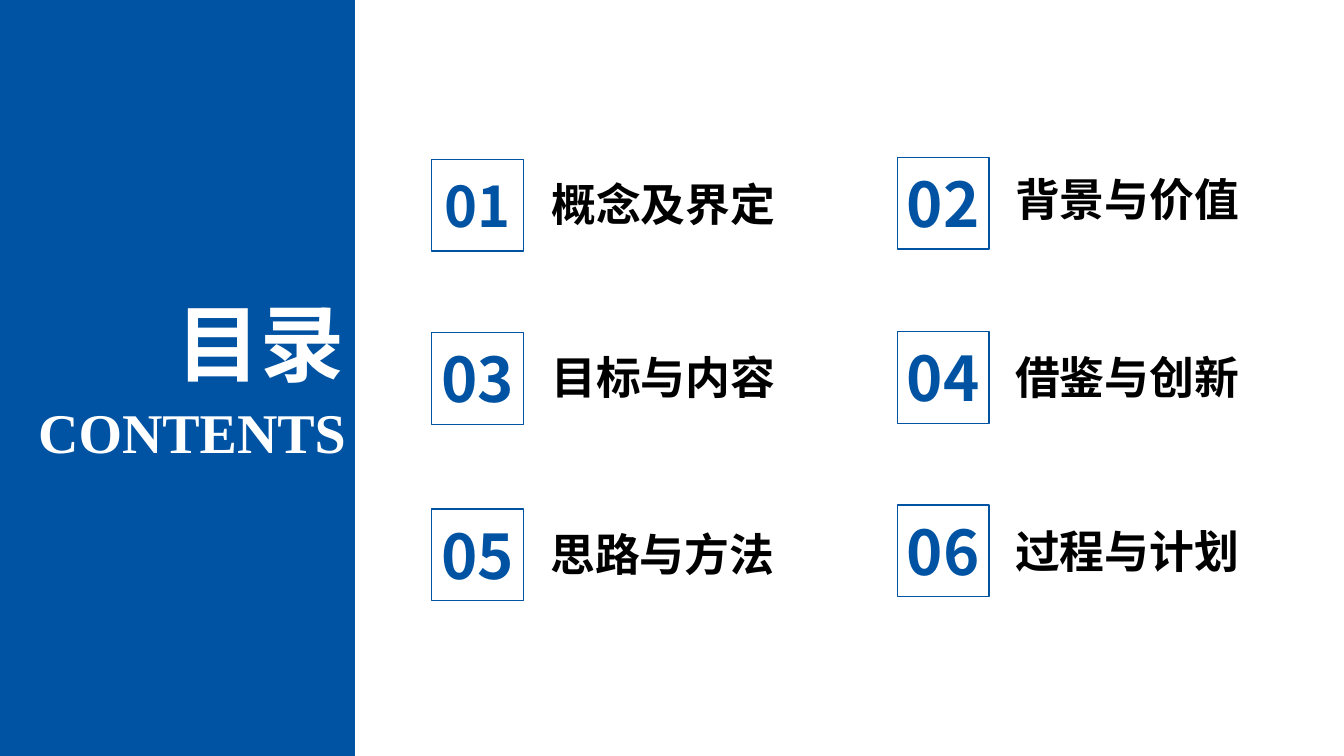
from lxml import etree
from pptx import Presentation
from pptx.dml.color import RGBColor
from pptx.enum import shapes, text
from pptx.oxml import ns
from pptx.util import Inches, Pt

BLUE = RGBColor(0x00, 0x53, 0xA3)
WHITE = RGBColor(0xFF, 0xFF, 0xFF)
BLACK = RGBColor(0x00, 0x00, 0x00)
SANS = "Noto Sans CJK SC"
SERIF = "Times New Roman"
SIDE = 0.91
TOPICS = [
    ("01", "概念及界定", 4.28, 1.58, 5.37, 1.70, 40),
    ("02", "背景与价值", 8.90, 1.56, 9.97, 1.65, 44),
    ("03", "目标与内容", 4.28, 3.30, 5.37, 3.42, 44),
    ("04", "借鉴与创新", 8.90, 3.29, 9.97, 3.42, 44),
    ("05", "思路与方法", 4.28, 5.05, 5.36, 5.18, 44),
    ("06", "过程与计划", 8.90, 5.01, 9.97, 5.15, 44),
]


def add_text(parent, words, x, y, w, h, size=32, color=BLACK, font=SANS,
             align=text.PP_ALIGN.LEFT):
    """Add one line of bold text in a box that grows to fit."""
    box = parent.add_textbox(Inches(x), Inches(y), Inches(w), Inches(h))
    frame = box.text_frame
    frame.word_wrap = True
    frame.auto_size = text.MSO_AUTO_SIZE.SHAPE_TO_FIT_TEXT
    para = frame.paragraphs[0]
    para.alignment = align
    run = para.add_run()
    run.text = words
    run.font.name = font
    run.font.size = Pt(size)
    run.font.bold = True
    run.font.color.rgb = color
    east = etree.SubElement(run.font._element, ns.qn("a:ea"))
    east.set("typeface", font)


def add_rect(parent, x, y, w, h, fill=None, line=None):
    """Add a flat rectangle with an optional fill and outline."""
    rect = parent.add_shape(shapes.MSO_SHAPE.RECTANGLE,
                            Inches(x), Inches(y), Inches(w), Inches(h))
    rect.shadow.inherit = False
    if fill is None:
        rect.fill.background()
    else:
        rect.fill.solid()
        rect.fill.fore_color.rgb = fill
    if line is None:
        rect.line.fill.background()
    else:
        rect.line.color.rgb = line
        rect.line.width = Pt(1)


def add_topic(slide, num, title, x, y, left, top, size):
    """Group a topic's title with its number centred in a square."""
    group = slide.shapes.add_group_shape().shapes
    add_text(group, title, left, top, 2.62, 0.64)
    w, h = (SIDE, 0.77) if size == 40 else (0.98, 0.84)
    add_text(group, num, x + (SIDE - w) / 2, y + (SIDE - h) / 2, w, h,
             size=size, color=BLUE, align=text.PP_ALIGN.CENTER)
    add_rect(group, x, y, SIDE, SIDE, line=BLUE)


def main():
    """Build the contents slide."""
    deck = Presentation()
    deck.slide_width, deck.slide_height = Inches(13.33), Inches(7.5)
    slide = deck.slides.add_slide(deck.slide_layouts[6])
    add_rect(slide.shapes, 0, 0, 3.52, 7.5, fill=BLUE)
    add_text(slide.shapes, "目录", 0.98, 2.84, 2.54, 1.11, size=60,
             color=WHITE, align=text.PP_ALIGN.RIGHT)
    add_text(slide.shapes, "CONTENTS", 0, 3.89, 3.53, 0.77, size=40,
             color=WHITE, font=SERIF, align=text.PP_ALIGN.RIGHT)
    for topic in TOPICS:
        add_topic(slide, *topic)
    deck.save("out.pptx")


if __name__ == "__main__":
    main()
